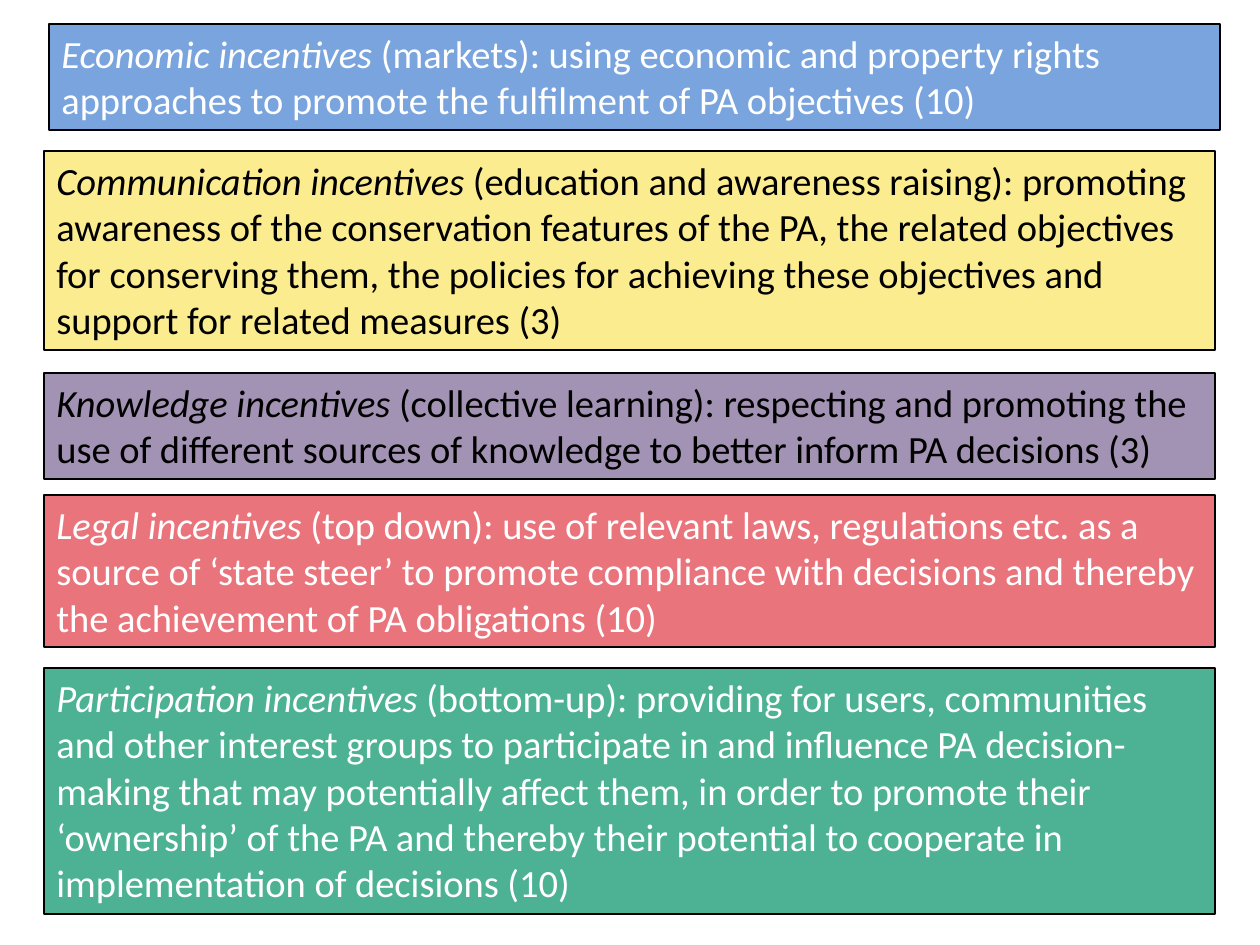
"""Build a slide of five coloured boxes describing types of incentives."""
from pptx import Presentation
from pptx.dml.color import RGBColor
from pptx.enum.text import MSO_ANCHOR, MSO_AUTO_SIZE
from pptx.util import Inches, Pt

PX = Inches(1) / 126
COLORS = {
    "blue": "7AA4DD", "yellow": "FCEC90", "purple": "A292B3",
    "red": "EA747C", "green": "4DB293", "black": "000000", "white": "FFFFFF",
}
BOX_WIDTH = 1171
FRAME = {"word_wrap": True, "auto_size": MSO_AUTO_SIZE.SHAPE_TO_FIT_TEXT,
         "vertical_anchor": MSO_ANCHOR.TOP}
FONT = {"name": "Calibri", "size": Pt(22), "bold": False}
INCENTIVES = [
    (49, 24, 106, "blue", "white", "Economic incentives ",
     "(markets): using economic and property rights approaches to promote "
     "the fulfilment of PA objectives (10)"),
    (44, 151, 199, "yellow", "black", "Communication incentives ",
     "(education and awareness raising): promoting awareness of the "
     "conservation features of the PA, the related objectives for conserving "
     "them, the policies for achieving these objectives and support for "
     "related measures (3)"),
    (44, 373, 106, "purple", "black", "Knowledge incentives ",
     "(collective learning): respecting and promoting the use of different "
     "sources of knowledge to better inform PA decisions (3)"),
    (44, 495, 152, "red", "white", "Legal incentives ",
     "(top down): use of relevant laws, regulations etc. as a source of "
     "‘state steer’ to promote compliance with decisions and thereby the "
     "achievement of PA obligations (10)"),
    (44, 668, 246, "green", "white", "Participation incentives ",
     "(bottom-up): providing for users, communities and other interest groups "
     "to participate in and influence PA decision-making that may potentially "
     "affect them, in order to promote their ‘ownership’ of the PA and thereby "
     "their potential to cooperate in implementation of decisions (10)"),
]


def px(n):
    return round(n * PX)


def rgb(name):
    return RGBColor.from_string(COLORS[name])


prs = Presentation()
prs.slide_width, prs.slide_height = px(1260), px(945)
s = prs.slides.add_slide(prs.slide_layouts[6])

for left, top, height, fill, ink, term, meaning in INCENTIVES:
    sp = s.shapes.add_textbox(px(left), px(top), px(BOX_WIDTH), px(height))
    sp.fill.solid()
    sp.fill.fore_color.rgb = rgb(fill)
    sp.line.color.rgb = rgb("black")
    sp.line.width = Pt(0.75)
    tf = sp.text_frame
    for key, value in FRAME.items():
        setattr(tf, key, value)
    p = tf.paragraphs[0]
    for text, italic in ((term, True), (meaning, False)):
        r = p.add_run()
        r.text = text
        for key, value in {**FONT, "italic": italic}.items():
            setattr(r.font, key, value)
        r.font.color.rgb = rgb(ink)

prs.save("out.pptx")
